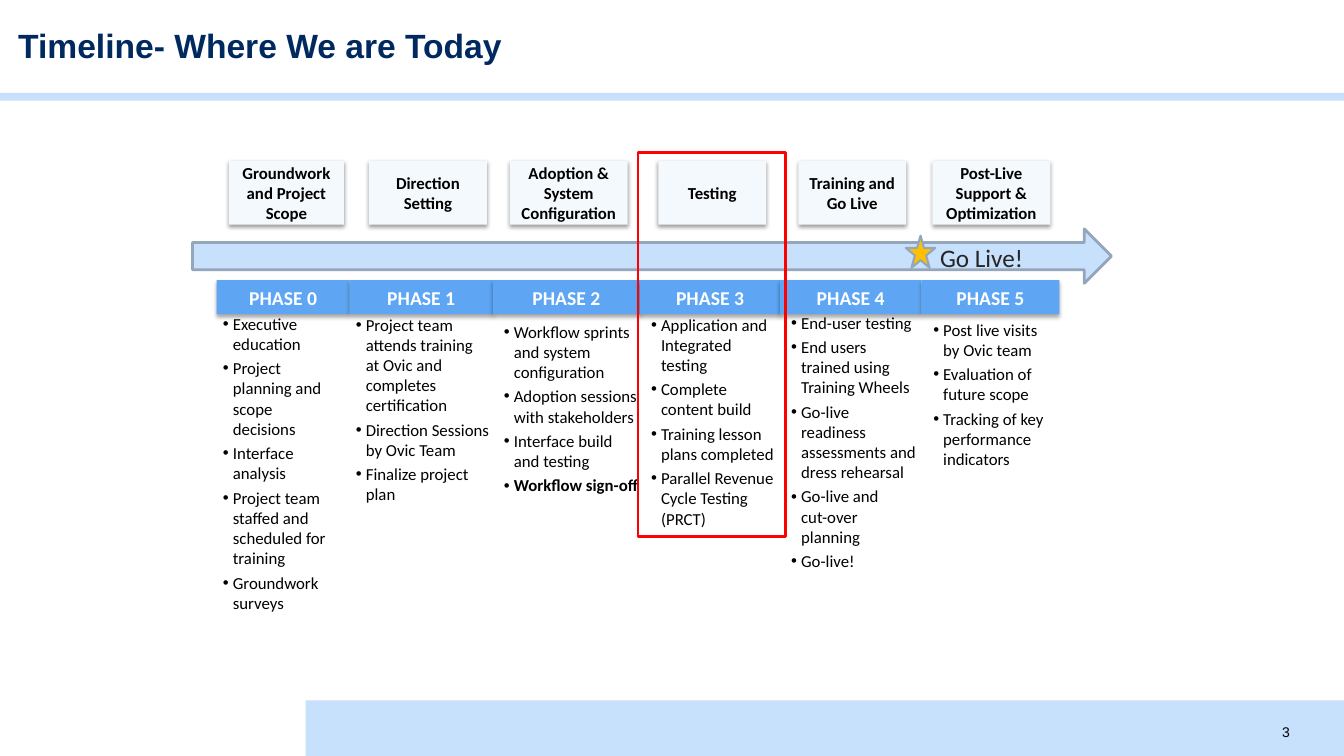
from itertools import pairwise

from lxml.etree import SubElement
from pptx import Presentation
from pptx.dml.color import RGBColor
from pptx.enum.shapes import MSO_SHAPE as Shape
from pptx.enum.text import MSO_ANCHOR as Anchor, PP_ALIGN as Align
from pptx.oxml.ns import qn
from pptx.util import Cm, Pt

PHASES = [
    ("Groundwork and Project Scope", ["Executive education", "Project planning and scope decisions",
     "Interface analysis", "Project team staffed and scheduled for training", "Groundwork surveys"]),
    ("Direction Setting", ["Project team attends training at Ovic and completes certification",
     "Direction Sessions by Ovic Team", "Finalize project plan"]),
    ("Adoption & System Configuration", ["Workflow sprints and system configuration",
     "Adoption sessions with stakeholders", "Interface build and testing", "Workflow sign-off"]),
    ("Testing", ["Application and Integrated testing", "Complete content build",
     "Training lesson plans completed", "Parallel Revenue Cycle Testing (PRCT)"]),
    ("Training and Go Live", ["End-user testing", "End users trained using Training Wheels",
     "Go-live readiness assessments and\vdress rehearsal", "Go-live and\vcut-over planning", "Go-live!"]),
    ("Post-Live Support & Optimization", ["Post live visits by Ovic team",
     "Evaluation of future scope", "Tracking of key performance indicators"]),
]
CARDS = [(5.77, 2.9), (9.3, 2.97), (12.85, 2.97), (16.59, 2.72), (20.12, 2.72), (23.5, 2.97)]
PHASE_EDGES = [5.46, 8.81, 12.42, 16.13, 19.66, 23.22, 26.7]
TASK_BOXES = [(5.49, 7.85, 3.18, 7.21), (8.84, 7.87, 3.63, 4.95), (12.57, 8.05, 3.66, 5.56),
              (16.28, 7.87, 3.38, 5.56), (19.81, 7.82, 3.45, 6.2), (23.39, 8, 3.14, 3.9)]
BOLD_TASKS = {"Workflow sign-off"}


def color(value):
    return RGBColor.from_string(value)


def write(para, text, size=12, font="Calibri", ink="000000", bold=False, align=None):
    para.text = text
    if align is not None:
        para.alignment = align
    for span in para.runs:
        span.font.size = Pt(size)
        span.font.name = font
        span.font.bold = bold
        span.font.color.rgb = color(ink)
    for line_break in para._p.findall(qn("a:br")):
        SubElement(line_break, qn("a:rPr"), sz=str(size * 100))


def set_margins(frame, across, down):
    frame.margin_left = frame.margin_right = Cm(across)
    frame.margin_top = frame.margin_bottom = Cm(down)


class TimelineSlide:
    pale = "C7E0FB"
    card = "F4F9FE"
    phase = "5EA6F3"
    outline = "93A6BA"
    navy = "002960"

    def __init__(self, deck):
        self.page = deck.slides.add_slide(deck.slide_layouts[6])

    def shape(self, kind, bounds, fill=None, line=None, width=2):
        shape = self.page.shapes.add_shape(kind, *map(Cm, bounds))
        shape.shadow.inherit = False
        if fill:
            shape.fill.solid()
            shape.fill.fore_color.rgb = color(fill)
        else:
            shape.fill.background()
        if line:
            shape.line.color.rgb = color(line)
            shape.line.width = Pt(width)
        else:
            shape.line.fill.background()
        return shape

    def raised_box(self, bounds, fill, text, opacity, distance, **style):
        box = self.shape(Shape.RECTANGLE, bounds, fill)
        effects = box._element.spPr.find(qn("a:effectLst"))
        shadow = SubElement(effects, qn("a:outerShdw"), blurRad=str(Pt(3.1)),
                            dist=str(Pt(distance)), dir="5400000", rotWithShape="0")
        black = SubElement(shadow, qn("a:srgbClr"), val="000000")
        SubElement(black, qn("a:alpha"), val=str(opacity * 1000))
        frame = box.text_frame
        frame.word_wrap = True
        frame.vertical_anchor = Anchor.MIDDLE
        write(frame.paragraphs[0], text, bold=True, align=Align.CENTER, **style)

    def label(self, bounds, text, margins=(0, 0), anchor=Anchor.TOP, wrap=True, **style):
        frame = self.page.shapes.add_textbox(*map(Cm, bounds)).text_frame
        frame.word_wrap = wrap
        frame.vertical_anchor = anchor
        set_margins(frame, *margins)
        write(frame.paragraphs[0], text, **style)

    def bullets(self, bounds, tasks):
        frame = self.page.shapes.add_textbox(*map(Cm, bounds)).text_frame
        frame.word_wrap = True
        set_margins(frame, 0.13, 0.05)
        for index, task in enumerate(tasks):
            para = frame.add_paragraph() if index else frame.paragraphs[0]
            props = para._p.get_or_add_pPr()
            props.set("marL", str(Cm(0.25)))
            props.set("indent", str(-Cm(0.25)))
            SubElement(props, qn("a:buFont"), typeface="Arial")
            SubElement(props, qn("a:buChar"), char="•")
            if index:
                para.space_before = Pt(3)
            write(para, task, bold=task in BOLD_TASKS)


def main():
    deck = Presentation()
    deck.slide_width, deck.slide_height = Cm(33.87), Cm(19.05)
    slide = TimelineSlide(deck)

    slide.shape(Shape.RECTANGLE, (7.7, 17.65, 26.17, 1.4), slide.pale)
    slide.shape(Shape.RECTANGLE, (0, 2.34, 33.87, 0.2), slide.pale)
    slide.label((0.46, 0.74, 28.93, 0.81), "Timeline- Where We are Today", anchor=Anchor.MIDDLE,
                size=24, font="Arial", ink=slide.navy, bold=True)
    slide.label((32.31, 18.24, 0.74, 0.43), "3", wrap=False, size=10, font="Arial")

    for bounds, (_, tasks) in zip(TASK_BOXES, PHASES):
        slide.bullets(bounds, tasks)
    for (left, width), (title, _) in zip(CARDS, PHASES):
        slide.raised_box((left, 4.06, width, 1.6), slide.card, title, 38, 1.6)
    for number, (left, right) in enumerate(pairwise(PHASE_EDGES)):
        slide.raised_box((left, 7.06, right - left, 0.86), slide.phase, f"PHASE {number}",
                         35, 1.8, size=14, ink="FFFFFF")

    slide.shape(Shape.RIGHT_ARROW, (4.85, 5.77, 23.16, 1.37), slide.pale, slide.outline)
    slide.shape(Shape.STAR_5_POINT, (22.83, 5.94, 0.74, 0.81), "FFC000", slide.outline, 1.5)
    slide.label((23.44, 5.97, 2.95, 1.02), "Go Live!", margins=(0.25, 0.13), size=18, ink="262626")
    slide.shape(Shape.RECTANGLE, (16.08, 3.84, 3.71, 9.68), line="FF0000")

    deck.save("out.pptx")


if __name__ == "__main__":
    main()
